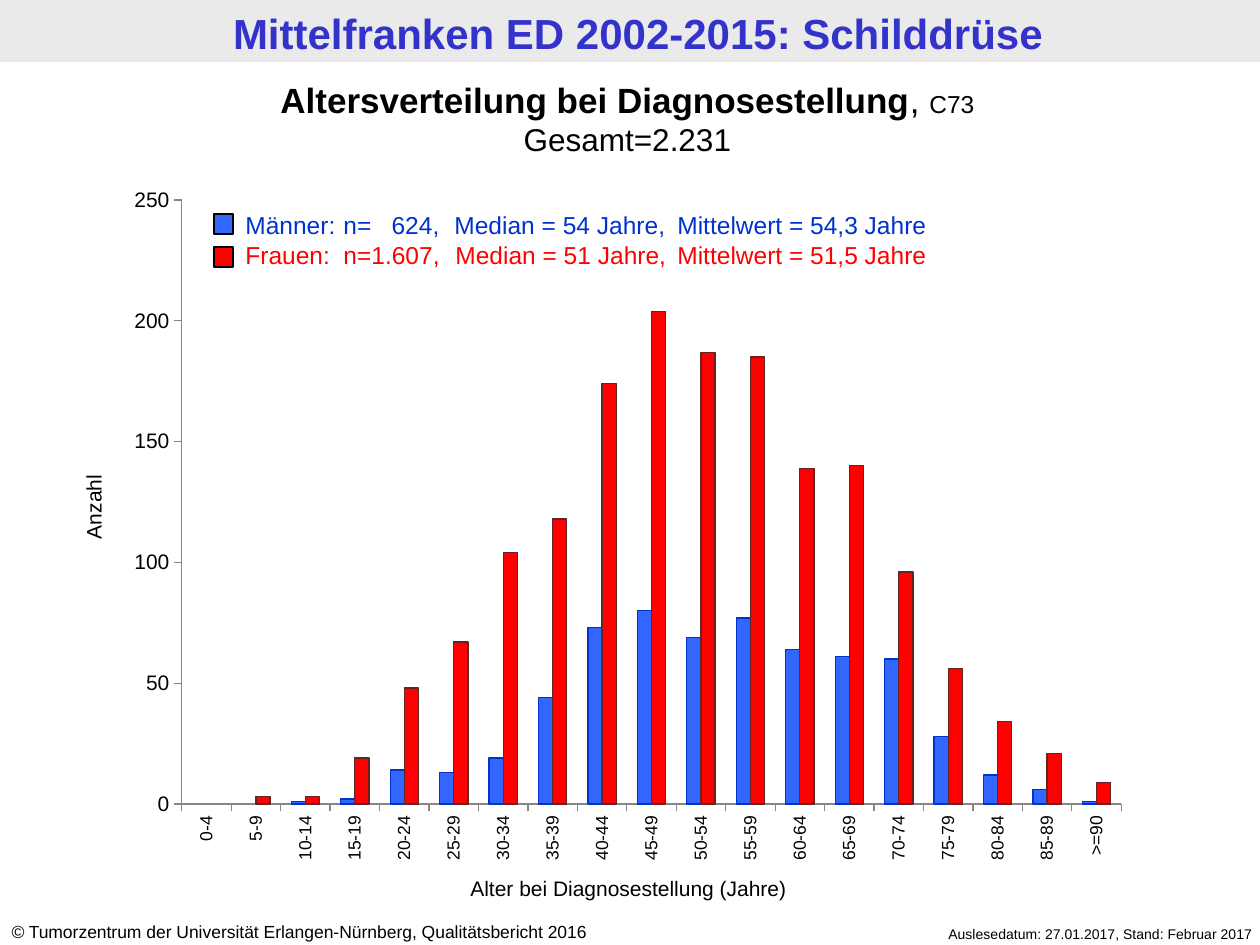
from pptx import Presentation
from pptx.chart.data import CategoryChartData
from pptx.dml.color import RGBColor
from pptx.enum.chart import XL_CHART_TYPE, XL_TICK_MARK
from pptx.enum.shapes import MSO_SHAPE
from pptx.enum.text import MSO_ANCHOR, PP_ALIGN
from pptx.oxml import parse_xml
from pptx.oxml.ns import nsdecls
from pptx.util import Pt

PX = 914400 // 126
BLACK = RGBColor(0, 0, 0)
WHITE = RGBColor(255, 255, 255)
BAND = RGBColor(0xEA, 0xEA, 0xEA)
TITLE = RGBColor(0x33, 0x33, 0xCC)
BLUE = RGBColor(0x33, 0x66, 0xFF)
DARK_BLUE = RGBColor(0, 0x33, 0xCC)
RED = RGBColor(255, 0, 0)
DARK_RED = RGBColor(0x63, 0x25, 0x23)
GRAY = RGBColor(0x86, 0x86, 0x86)

AGES = [f"{a}-{a + 4}" for a in range(0, 90, 5)] + [">=90"]
SERIES = [
    ("Männer", BLUE, DARK_BLUE,
     [None, None, 1, 2, 14, 13, 19, 44, 73, 80, 69, 77, 64, 61, 60, 28, 12, 6, 1]),
    ("Frauen", RED, DARK_RED,
     [None, 3, 3, 19, 48, 67, 104, 118, 174, 204, 187, 185, 139, 140, 96, 56, 34, 21, 9]),
]
# Legend: text, colours, key top, tab stops (px, alignment)
LEGEND = [
    ("Männer:\tn=\t624,\tMedian = 54 Jahre,\tMittelwert = 54,3 Jahre", DARK_BLUE, BLUE, 214,
     [(98, "l"), (194, "r"), (209, "l"), (432, "l")]),
    ("Frauen:\tn=1.607,\tMedian = 51 Jahre,\tMittelwert = 51,5 Jahre", RED, RED, 247,
     [(98, "l"), (210, "l"), (432, "l")]),
]
# Text boxes: box, rotation, alignment, paragraphs of runs (text, size, bold, italic)
TEXTS = [
    ((-5, 72, 1265, 93), 0, PP_ALIGN.CENTER, [
        [("Altersverteilung bei Diagnosestellung", 20, True, False),
         (", ", 20, False, False), ("C73", 14, False, False)],
        [("Gesamt=2.231", 18, False, False)]]),
    ((435, 869, 387, 38), 0, PP_ALIGN.CENTER,
     [[("Alter bei Diagnosestellung (Jahre)", 12, False, False)]]),
    ((-71, 488, 329, 38), 270, PP_ALIGN.CENTER, [[("Anzahl", 12, False, False)]]),
    ((-1, 915, 660, 34), 0, PP_ALIGN.LEFT, [
        [("©", 10, False, True),
         (" Tumorzentrum der Universität Erlangen-Nürnberg, Qualitätsbericht 2016",
          10, False, False)]]),
    ((838, 919, 427, 30), 0, PP_ALIGN.RIGHT,
     [[("Auslesedatum: 27.01.2017, Stand: Februar 2017", 8, False, False)]]),
]
CHART = (115, 175, 1028, 699)
PLOT = (182, 200, 940, 604)


def emu(*px):
    return [v * PX for v in px]


def style(font, size, color=BLACK, bold=False, italic=False):
    font.name, font.size, font.bold, font.italic = "Arial", Pt(size), bold, italic
    font.color.rgb = color


def add_rect(s, box, fill, line=None):
    sp = s.shapes.add_shape(MSO_SHAPE.RECTANGLE, *emu(*box))
    sp.shadow.inherit = False
    sp.fill.solid()
    sp.fill.fore_color.rgb = fill
    if line is None:
        sp.line.fill.background()
    else:
        sp.line.color.rgb = line
        sp.line.width = Pt(0.75)
    return sp


def add_textbox(s, box):
    sp = s.shapes.add_textbox(*emu(*box))
    sp.text_frame.word_wrap = True
    return sp


def add_paragraph(tf, i):
    return tf.paragraphs[0] if i == 0 else tf.add_paragraph()


prs = Presentation()
prs.slide_width, prs.slide_height = emu(1260, 945)
s = prs.slides.add_slide(prs.slide_layouts[5])

# Header band, placed behind the title
band = add_rect(s, (0, 0, 1260, 62), BAND)
title = s.shapes.title
title._element.addprevious(band._element)
title.left, title.top, title.width, title.height = emu(8, 1, 1260, 62)
tf = title.text_frame
tf.text = "Mittelfranken ED 2002-2015: Schilddrüse"
tf.vertical_anchor = MSO_ANCHOR.BOTTOM
tf.margin_top = tf.margin_bottom = 5 * PX
tf.paragraphs[0].alignment = PP_ALIGN.CENTER
style(tf.paragraphs[0].runs[0].font, 24, TITLE, bold=True)

# Column chart
data = CategoryChartData()
data.categories = AGES
for name, _, _, values in SERIES:
    data.add_series(name, values)
chart = s.shapes.add_chart(XL_CHART_TYPE.COLUMN_CLUSTERED, *emu(*CHART), data).chart
chart.has_legend = chart.has_title = False
style(chart.font, 12)
plot = chart.plots[0]
plot.gap_width, plot.overlap, plot.vary_by_categories = 150, 0, False
for ser, (_, fill, line, _) in zip(plot.series, SERIES):
    ser.format.fill.solid()
    ser.format.fill.fore_color.rgb = fill
    ser.format.line.color.rgb = line
    ser.format.line.width = Pt(0.75)
    ser.invert_if_negative = False
for axis, size in ((chart.category_axis, 10), (chart.value_axis, 12)):
    axis.has_major_gridlines = False
    axis.major_tick_mark = XL_TICK_MARK.OUTSIDE
    axis.minor_tick_mark = XL_TICK_MARK.NONE
    axis.format.line.color.rgb = GRAY
    axis.format.line.width = Pt(0.75)
    style(axis.tick_labels.font, size)
val = chart.value_axis
val.minimum_scale, val.maximum_scale, val.major_unit = 0, 250, 50
body = chart.category_axis._element.txPr.find(
    "{http://schemas.openxmlformats.org/drawingml/2006/main}bodyPr")
body.set("rot", "-5400000")
body.set("vert", "horz")

# Fixed plot area
area = chart._chartSpace.chart.plotArea
for old in area.xpath("c:layout"):
    area.remove(old)
fractions = [(PLOT[0] - CHART[0]) / CHART[2], (PLOT[1] - CHART[1]) / CHART[3],
             PLOT[2] / CHART[2], PLOT[3] / CHART[3]]
marks = "".join(f'<c:{k}Mode val="edge"/>' for k in "xy")
marks += "".join(f'<c:{k} val="{v:.3f}"/>' for k, v in zip("xywh", fractions))
area.insert(0, parse_xml(
    f'<c:layout {nsdecls("c")}><c:manualLayout><c:layoutTarget val="inner"/>'
    f'{marks}</c:manualLayout></c:layout>'))
area.append(parse_xml(
    f'<c:spPr {nsdecls("c", "a")}><a:solidFill><a:srgbClr val="{WHITE}"/>'
    '</a:solidFill></c:spPr>'))

# Legend with colour keys
tf = add_textbox(s, (233, 204, 863, 72)).text_frame
for i, (text, color, key, top, tabs) in enumerate(LEGEND):
    p = add_paragraph(tf, i)
    p.text = text
    stops = "".join(f'<a:tab pos="{x * PX}" algn="{al}"/>' for x, al in tabs)
    p._p.get_or_add_pPr().append(
        parse_xml(f'<a:tabLst {nsdecls("a")}>{stops}</a:tabLst>'))
    for r in p.runs:
        style(r.font, 14, color)
    add_rect(s, (214, top, 19, 20), key, BLACK)

# Headings, axis titles and footer
for box, rotation, align, paragraphs in TEXTS:
    sp = add_textbox(s, box)
    sp.rotation = rotation
    for i, runs in enumerate(paragraphs):
        p = add_paragraph(sp.text_frame, i)
        p.alignment = align
        for text, size, bold, italic in runs:
            r = p.add_run()
            r.text = text
            style(r.font, size, bold=bold, italic=italic)

prs.save("out.pptx")
